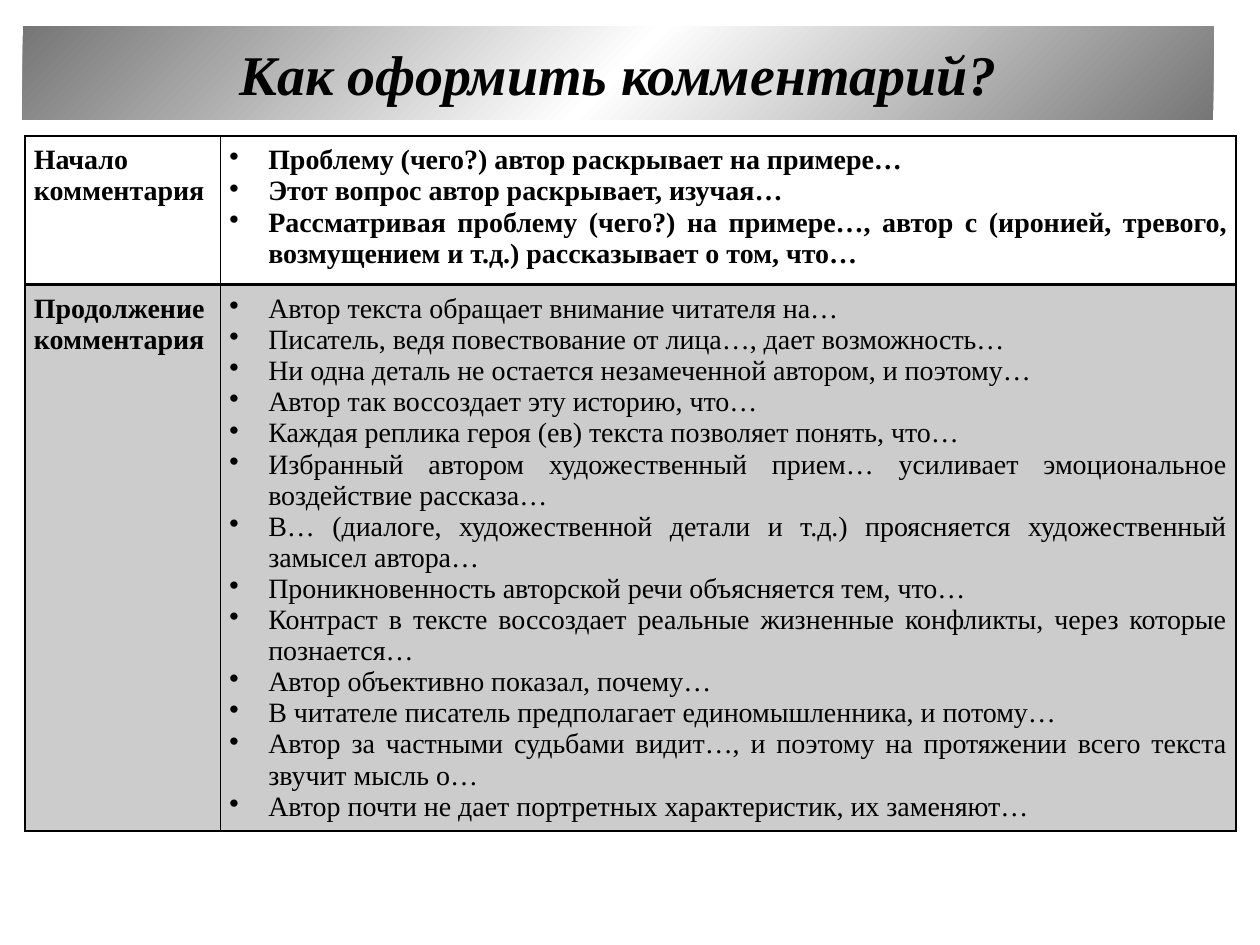
from copy import deepcopy

from lxml import etree
from pptx import Presentation
from pptx.dml.color import RGBColor
from pptx.enum.text import MSO_ANCHOR, MSO_AUTO_SIZE, PP_ALIGN
from pptx.oxml.ns import qn
from pptx.util import Inches, Pt

MIDDLE = MSO_ANCHOR.MIDDLE
NO_AUTOFIT = MSO_AUTO_SIZE.NONE
CENTER, LEFT, JUSTIFY = PP_ALIGN.CENTER, PP_ALIGN.LEFT, PP_ALIGN.JUSTIFY
COLORS = {"text": "000000", "edge": "767676", "center": "FFFFFF", "cell": "FFFFFF", "shade": "000000"}
FONT = "Times New Roman"
SHADE_OPACITY = 20
INDENT = Inches(0.31)
ROWS = [
    ("Начало комментария", [
        "Проблему (чего?) автор раскрывает на примере…",
        "Этот вопрос автор раскрывает, изучая…",
        "Рассматривая проблему (чего?) на примере…, автор с (иронией, тревого, возмущением и т.д.) рассказывает о том, что…",
    ]),
    ("Продолжение комментария", [
        "Автор текста обращает внимание читателя на…",
        "Писатель, ведя повествование от лица…, дает возможность…",
        "Ни одна деталь не остается незамеченной автором, и поэтому…",
        "Автор так воссоздает эту историю, что…",
        "Каждая реплика героя (ев) текста позволяет понять, что…",
        "Избранный автором художественный прием… усиливает эмоциональное воздействие рассказа…",
        "В… (диалоге, художественной детали и т.д.) проясняется художественный замысел автора…",
        "Проникновенность авторской речи объясняется тем, что…",
        "Контраст в тексте воссоздает реальные жизненные конфликты, через которые познается…",
        "Автор объективно показал, почему…",
        "В читателе писатель предполагает единомышленника, и потому…",
        "Автор за частными судьбами видит…, и поэтому на протяжении всего текста звучит мысль о…",
        "Автор почти не дает портретных характеристик, их заменяют…",
    ]),
]


def write(paragraph, text, alignment, **formats):
    paragraph.alignment = alignment
    run = paragraph.add_run()
    run.text = text
    run.font.color.rgb = RGBColor.from_string(COLORS["text"])
    for name, value in {"name": FONT, **formats}.items():
        setattr(run.font, name, value)


def add_borders(cell, widths):
    properties = cell._tc.get_or_add_tcPr()
    for position, (side, width) in enumerate(widths.items()):
        line = etree.Element(qn(f"a:ln{side}"), w=str(Pt(width)))
        fill = etree.SubElement(line, qn("a:solidFill"))
        etree.SubElement(fill, qn("a:srgbClr"), val=COLORS["text"])
        properties.insert(position, line)


presentation = Presentation()
presentation.slide_width = Inches(10)
presentation.slide_height = Inches(7.5)
slide = presentation.slides.add_slide(presentation.slide_layouts[5])

title = slide.shapes.title
for name, value in {"left": 0.18, "top": 0.21, "width": 9.45, "height": 0.74}.items():
    setattr(title, name, Inches(value))
title.fill.gradient()
title.fill.gradient_angle = 135
stop_list = title._element.spPr.find(".//" + qn("a:gsLst"))
stop_list.insert(1, deepcopy(stop_list[0]))
for stop, position, color in zip(title.fill.gradient_stops, (0, 0.5, 1), ("edge", "center", "edge")):
    stop.position = position
    stop.color.rgb = RGBColor.from_string(COLORS[color])
title.text_frame.auto_size = NO_AUTOFIT
title.text_frame.vertical_anchor = MIDDLE
write(title.text_frame.paragraphs[0], "Как оформить комментарий?", CENTER, size=Pt(32), bold=True, italic=True)

table = slide.shapes.add_table(2, 2, Inches(0.2), Inches(1.08), Inches(9.61), Inches(5.43)).table
table.first_row = False
table.horz_banding = False
for column, width in zip(table.columns, (1.55, 8.06)):
    column.width = Inches(width)
for row, height in zip(table.rows, (1.18, 4.25)):
    row.height = Inches(height)

for row_index, (heading, phrases) in enumerate(ROWS):
    is_first = row_index == 0
    for column_index in range(2):
        cell = table.cell(row_index, column_index)
        for side in ("left", "top", "right", "bottom"):
            setattr(cell, f"margin_{side}", Inches(0.07))
        cell.fill.solid()
        cell.fill.fore_color.rgb = RGBColor.from_string(COLORS["cell" if is_first else "shade"])
        if not is_first:
            color = cell._tc.tcPr.find(".//" + qn("a:srgbClr"))
            etree.SubElement(color, qn("a:alpha"), val=str(SHADE_OPACITY * 1000))
        add_borders(cell, {"L": 1, "R": 1, "T": 1 if is_first else 2, "B": 2 if is_first else 1})

    write(table.cell(row_index, 0).text_frame.paragraphs[0], heading, LEFT, size=Pt(16), bold=True)

    text_frame = table.cell(row_index, 1).text_frame
    for phrase_index, phrase in enumerate(phrases):
        paragraph = text_frame.add_paragraph() if phrase_index else text_frame.paragraphs[0]
        write(paragraph, phrase, JUSTIFY, size=Pt(16), bold=is_first)
        properties = paragraph._p.get_or_add_pPr()
        properties.set("marL", str(INDENT))
        properties.set("indent", str(-INDENT))
        etree.SubElement(properties, qn("a:buChar"), char="•")

presentation.save("out.pptx")
